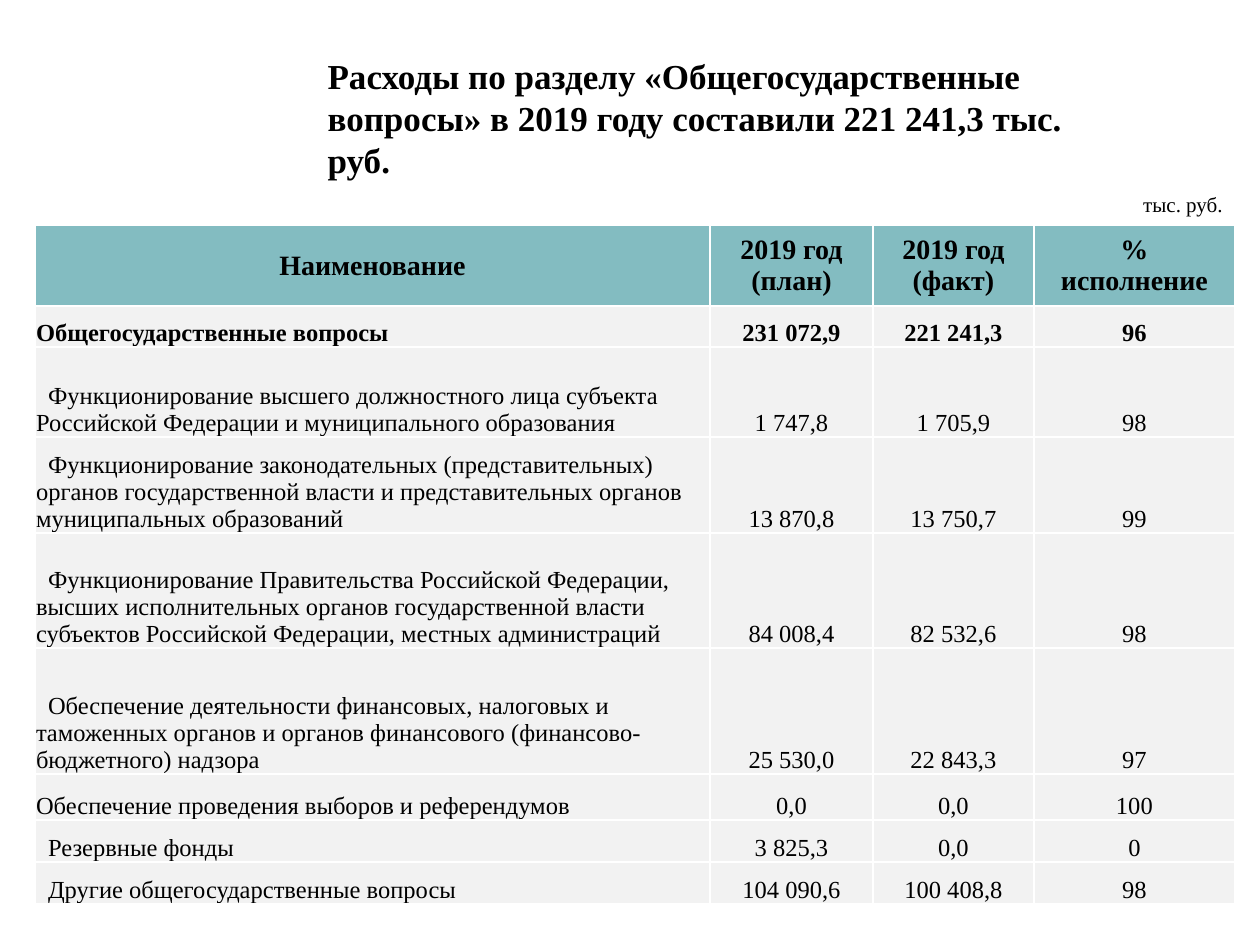
import pptx
import pptx.dml.color
import pptx.enum.text
import pptx.oxml
import pptx.oxml.ns
import pptx.util

PX = pptx.util.Inches(1) / 126
FONT = "Times New Roman"
COLORS = {"text": "000000", "header": "83BCC1", "body": "F2F2F2", "border": "FFFFFF"}
ALIGN = pptx.enum.text.PP_ALIGN
ANCHOR = pptx.enum.text.MSO_ANCHOR

COLUMN_WIDTHS = [675, 163, 161, 201]
ROW_HEIGHTS = [81, 41, 90, 96, 115, 126, 46, 42, 42]
FIRST_LINE_INDENT = 12
HEADER = ["Наименование", "2019 год\v(план)", "2019 год\v(факт)", "%\vисполнение"]
TOTAL = ["Общегосударственные вопросы", "231 072,9", "221 241,3", "96"]
# Each item: whether the name has a first-line indent, then the row values
ITEMS = [
    (True, ["Функционирование высшего должностного лица субъекта Российской Федерации "
            "и муниципального образования", "1 747,8", "1 705,9", "98"]),
    (True, ["Функционирование законодательных (представительных) органов государственной "
            "власти и представительных органов муниципальных образований",
            "13 870,8", "13 750,7", "99"]),
    (True, ["Функционирование Правительства Российской Федерации, высших исполнительных "
            "органов государственной власти субъектов Российской Федерации, местных "
            "администраций", "84 008,4", "82 532,6", "98"]),
    (True, ["Обеспечение деятельности финансовых, налоговых и таможенных органов и органов "
            "финансового (финансово-бюджетного) надзора", "25 530,0", "22 843,3", "97"]),
    (False, ["Обеспечение проведения выборов и референдумов", "0,0", "0,0", "100"]),
    (True, ["Резервные фонды", "3 825,3", "0,0", "0"]),
    (True, ["Другие общегосударственные вопросы", "104 090,6", "100 408,8", "98"]),
]


def px(n):
    return pptx.util.Emu(round(n * PX))


def rgb(name):
    return pptx.dml.color.RGBColor.from_string(COLORS[name])


def write(tf, text, size, bold=False, align=ALIGN.LEFT):
    tf.word_wrap = True
    p = tf.paragraphs[0]
    p.text = text
    p.alignment = align
    for r in p.runs:
        r.font.name = FONT
        r.font.size = pptx.util.Pt(size)
        r.font.bold = bold
        r.font.color.rgb = rgb("text")
    return p


def place(sp, left, top, width, height):
    sp.left, sp.top, sp.width, sp.height = map(px, (left, top, width, height))


def add_title(s, text):
    sp = s.shapes.title
    place(sp, 315, 48, 761, 140)
    tf = sp.text_frame
    tf.auto_size = pptx.enum.text.MSO_AUTO_SIZE.NONE
    tf.vertical_anchor = ANCHOR.TOP
    write(tf, text, 20, bold=True)


def add_unit_note(s, text):
    sp = s.shapes.add_textbox(px(1106), px(185), px(154), px(38))
    write(sp.text_frame, text, 12, align=ALIGN.CENTER)


def set_borders(cell):
    tc_pr = cell._tc.get_or_add_tcPr()
    for i, side in enumerate(("lnL", "lnR", "lnT", "lnB")):
        tc_pr.insert(i, pptx.oxml.parse_xml(
            f'<a:{side} {pptx.oxml.ns.nsdecls("a")} w="12700"><a:solidFill>'
            f'<a:srgbClr val="{COLORS["border"]}"/></a:solidFill></a:{side}>'))


def fill_row(table, row, values, size, bold, fill, anchor, name_align, indent=False):
    for col, value in enumerate(values):
        cell = table.cell(row, col)
        cell.fill.solid()
        cell.fill.fore_color.rgb = rgb(fill)
        cell.margin_left = cell.margin_right = cell.margin_top = px(1)
        cell.margin_bottom = 0
        cell.vertical_anchor = anchor
        align = name_align if col == 0 else ALIGN.CENTER
        p = write(cell.text_frame, value, size, bold, align)
        if indent and col == 0:
            p._p.get_or_add_pPr().set("indent", str(px(FIRST_LINE_INDENT)))
        set_borders(cell)


def add_expense_table(s):
    frame = s.shapes.add_table(len(ROW_HEIGHTS), len(COLUMN_WIDTHS), px(35), px(225),
                               px(sum(COLUMN_WIDTHS)), px(sum(ROW_HEIGHTS)))
    table = frame.table
    for column, width in zip(table.columns, COLUMN_WIDTHS):
        column.width = px(width)
    for row, height in zip(table.rows, ROW_HEIGHTS):
        row.height = px(height)
    fill_row(table, 0, HEADER, 16, True, "header", ANCHOR.MIDDLE, ALIGN.CENTER)
    for i, (indent, values) in enumerate([(False, TOTAL)] + ITEMS, start=1):
        fill_row(table, i, values, 14, i == 1, "body", ANCHOR.BOTTOM, ALIGN.LEFT, indent)


def main():
    prs = pptx.Presentation()
    prs.slide_width, prs.slide_height = px(1260), px(945)
    s = prs.slides.add_slide(prs.slide_layouts[5])
    add_unit_note(s, "тыс. руб.")
    add_expense_table(s)
    add_title(s, "Расходы по разделу «Общегосударственные вопросы» в 2019 году "
                 "составили 221 241,3 тыс. руб.")
    prs.save("out.pptx")


if __name__ == "__main__":
    main()
